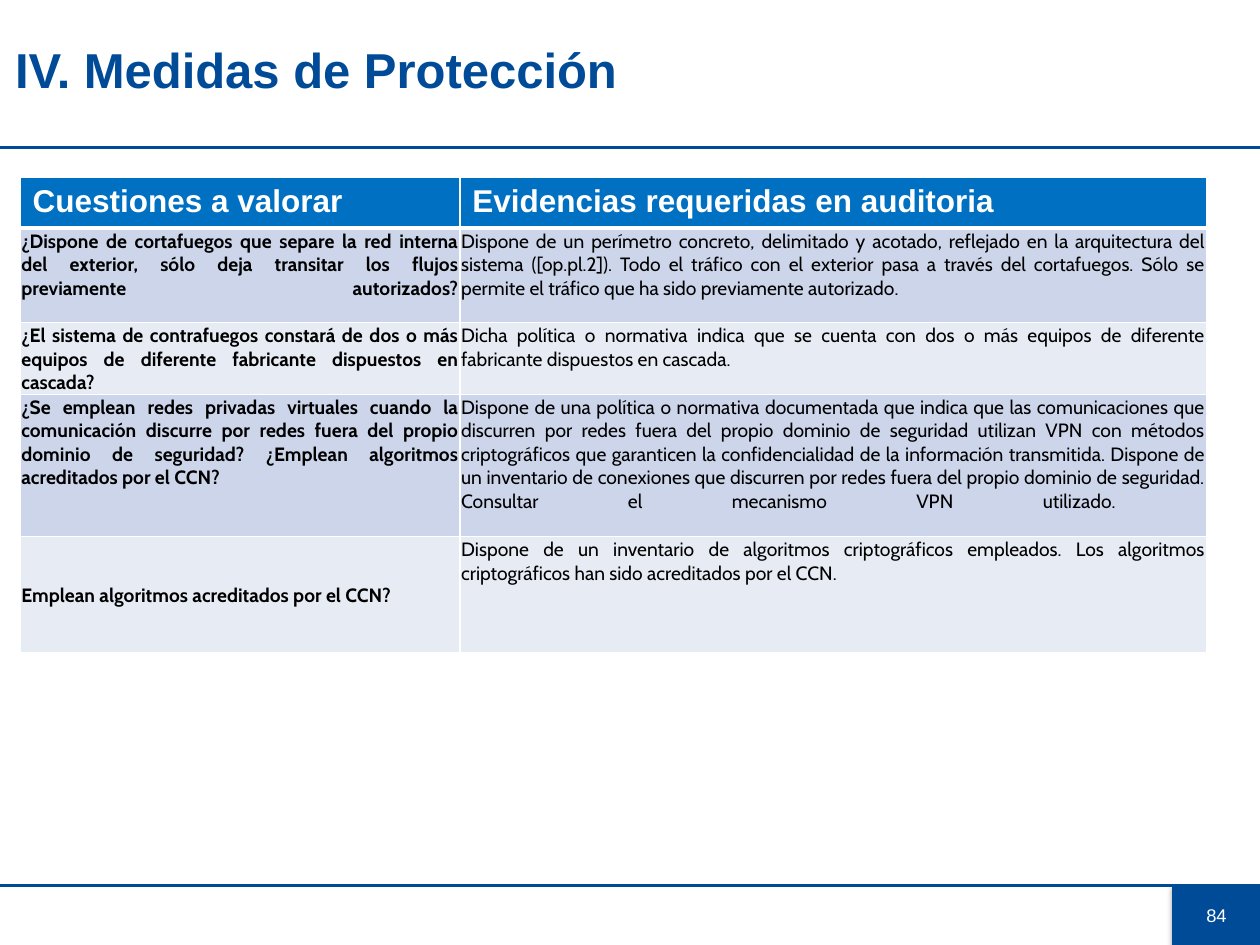
"""Build the slide on protection measures with its audit evidence table."""
from copy import deepcopy

from lxml import etree
from pptx import Presentation
from pptx.dml.color import RGBColor
from pptx.enum.shapes import MSO_CONNECTOR, MSO_SHAPE
from pptx.enum.text import MSO_ANCHOR, PP_ALIGN
from pptx.oxml import parse_xml
from pptx.oxml.ns import nsdecls, qn
from pptx.util import Inches, Pt

TITLE = "IV. Medidas de Protección"
PAGE = "84"
HEADERS = ("Cuestiones a valorar", "Evidencias requeridas en auditoria")
MEASURES = [
    ("¿Dispone de cortafuegos que separe la red interna del exterior, sólo deja transitar "
     "los flujos previamente autorizados?\n",
     "Dispone de un perímetro concreto, delimitado y acotado, reflejado en la arquitectura "
     "del sistema ([op.pl.2]). Todo el tráfico con el exterior pasa a través del "
     "cortafuegos. Sólo se permite el tráfico que ha sido previamente autorizado. "),
    ("¿El sistema de contrafuegos constará de dos o más equipos de diferente fabricante "
     "dispuestos en cascada? ",
     "Dicha política o normativa indica que se cuenta con dos o más equipos de diferente "
     "fabricante dispuestos en cascada. "),
    ("¿Se emplean redes privadas virtuales cuando la comunicación discurre por redes fuera "
     "del propio dominio de seguridad? ¿Emplean algoritmos acreditados por el CCN?",
     "Dispone de una política o normativa documentada que indica que las comunicaciones que "
     "discurren por redes fuera del propio dominio de seguridad utilizan VPN con métodos "
     "criptográficos que garanticen la confidencialidad de la información transmitida. "
     "Dispone de un inventario de conexiones que discurren por redes fuera del propio "
     "dominio de seguridad. Consultar el mecanismo VPN utilizado. \n"),
    ("Emplean algoritmos acreditados por el CCN? ",
     "Dispone de un inventario de algoritmos criptográficos empleados. Los algoritmos "
     "criptográficos han sido acreditados por el CCN."),
]
COLUMN_WIDTHS = (3.49, 5.93)
ROW_HEIGHTS = (0.37, 0.75, 0.57, 1.13, 0.92)
RULE_HEIGHTS = (1.17, 7.03)
COLORS = {"navy": "004B98", "header": "0070C2", "odd": "CCD5E9", "even": "E7EBF4",
          "white": "FFFFFF", "black": "000000"}


def rgb(name):
    return RGBColor.from_string(COLORS[name])


def write(frame, text, size=11, font="Cabin", color="black", bold=False,
          align=PP_ALIGN.LEFT, spacing=None):
    frame.word_wrap = True
    paragraph = frame.paragraphs[0]
    paragraph.alignment = align
    if spacing:
        paragraph.line_spacing = spacing
    run = paragraph.add_run()
    run.text = text.rstrip("\n")
    run.font.size, run.font.name, run.font.bold = Pt(size), font, bold
    run.font.color.rgb = rgb(color)
    if text.endswith("\n"):
        paragraph.add_line_break()
        line_break = paragraph._p.find(qn("a:br"))
        line_break.append(deepcopy(run._r.rPr))
        ending = deepcopy(run._r.rPr)
        ending.tag = qn("a:endParaRPr")
        paragraph._p.append(ending)


def set_borders(cell, top=1, bottom=1):
    properties = cell._tc.get_or_add_tcPr()
    widths = (("lnL", 1), ("lnR", 1), ("lnT", top), ("lnB", bottom))
    for position, (side, width) in enumerate(widths):
        properties.insert(position, parse_xml(
            f'<a:{side} {nsdecls("a")} w="{Pt(width)}"><a:solidFill>'
            f'<a:srgbClr val="{COLORS["white"]}"/></a:solidFill></a:{side}>'))


def add_rule(slide, y):
    rule = slide.shapes.add_connector(
        MSO_CONNECTOR.STRAIGHT, 0, Inches(y), Inches(10), Inches(y))
    rule.line.color.rgb = rgb("navy")
    rule.line.width = Pt(1.5)
    etree.SubElement(rule._element.spPr, qn("a:effectLst"))


def add_page_number(slide):
    badge = slide.shapes.add_shape(
        MSO_SHAPE.RECTANGLE, Inches(9.31), Inches(7.03), Inches(0.69), Inches(0.47))
    badge.shadow.inherit = False
    badge.fill.solid()
    badge.fill.fore_color.rgb = rgb("navy")
    badge.line.color.rgb = rgb("navy")
    badge.line.width = Pt(0.75)
    badge._element.spPr.find(qn("a:effectLst")).append(parse_xml(
        f'<a:outerShdw {nsdecls("a")} blurRad="{Pt(3.1)}" dist="{Pt(1.8)}" dir="5400000" '
        f'rotWithShape="0"><a:srgbClr val="{COLORS["black"]}"><a:alpha val="35000"/>'
        '</a:srgbClr></a:outerShdw>'))
    badge.text_frame.vertical_anchor = MSO_ANCHOR.MIDDLE
    write(badge.text_frame, PAGE, size=10.5, font="Arial", color="white",
          align=PP_ALIGN.CENTER)


def add_title(slide):
    title = slide.shapes.add_textbox(Inches(0.12), 0, Inches(9.53), Inches(1.16))
    frame = title.text_frame
    frame.margin_left = frame.margin_right = 0
    frame.vertical_anchor = MSO_ANCHOR.MIDDLE
    write(frame, TITLE, size=28, font="Arial", color="navy", bold=True, spacing=0.9)


def add_measures(slide):
    rows = [HEADERS, *MEASURES]
    table = slide.shapes.add_table(
        len(rows), len(HEADERS), Inches(0.16), Inches(1.41),
        Inches(sum(COLUMN_WIDTHS)), Inches(sum(ROW_HEIGHTS))).table
    for column, width in zip(table.columns, COLUMN_WIDTHS):
        column.width = Inches(width)
    for r, (texts, height) in enumerate(zip(rows, ROW_HEIGHTS)):
        table.rows[r].height = Inches(height)
        for c, text in enumerate(texts):
            cell = table.cell(r, c)
            cell.fill.solid()
            if r == 0:
                cell.fill.fore_color.rgb = rgb("header")
                write(cell.text_frame, text, size=18, font="Arial", color="white", bold=True)
            else:
                cell.fill.fore_color.rgb = rgb("odd" if r % 2 else "even")
                cell.margin_left = cell.margin_right = cell.margin_top = Inches(0.01)
                cell.margin_bottom = 0
                write(cell.text_frame, text, bold=c == 0, align=PP_ALIGN.JUSTIFY)
            set_borders(cell, top=3 if r == 1 else 1, bottom=3 if r == 0 else 1)
    table.cell(len(MEASURES), 0).vertical_anchor = MSO_ANCHOR.MIDDLE


def main():
    presentation = Presentation()
    presentation.slide_width, presentation.slide_height = Inches(10), Inches(7.5)
    slide = presentation.slides.add_slide(presentation.slide_layouts[6])
    add_page_number(slide)
    for y in RULE_HEIGHTS:
        add_rule(slide, y)
    add_title(slide)
    add_measures(slide)
    presentation.save("out.pptx")


if __name__ == "__main__":
    main()
